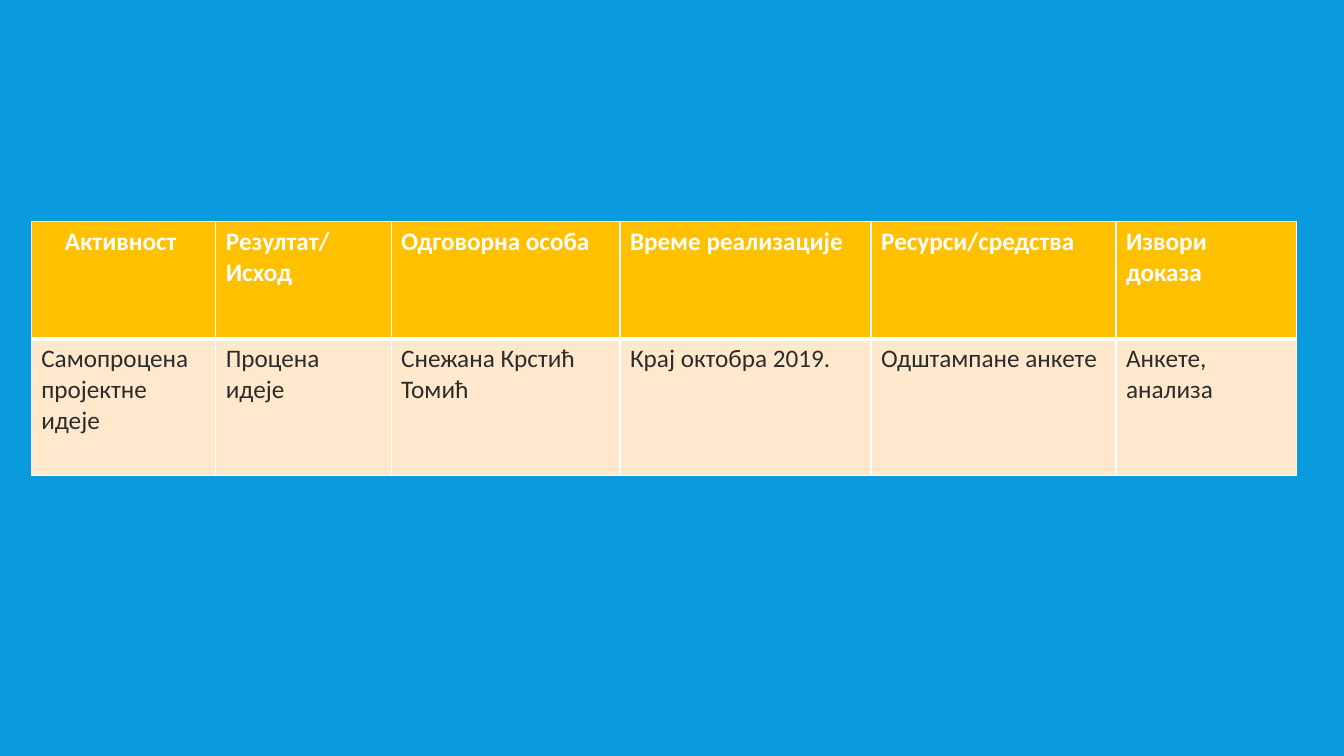
from lxml import etree
from pptx import Presentation
from pptx import util as u
from pptx.dml.color import RGBColor
from pptx.enum import text
from pptx.oxml import ns

THEME = {
    "background": "099BDD",
    "border": "FFFFFF",
    "header": {"fill": "FFC000", "color": "FFFFFF", "font": {"name": "Calibri", "size": u.Pt(18), "bold": True}},
    "body": {"fill": "FFE8CC", "color": "2C2C2C", "font": {"name": "Calibri", "size": u.Pt(18), "bold": False}},
}
BORDERS = {
    "header": {"lnL": 1, "lnR": 1, "lnT": 1, "lnB": 3},
    "body": {"lnL": 1, "lnR": 1, "lnT": 3, "lnB": 1},
}
PLAN = {
    "header": ["Активност ", "Резултат/\nИсход", "Одговорна особа",
               "Време реализације", "Ресурси/средства", "Извори доказа"],
    "body": ["Самопроцена пројектне идеје", "Процена идеје", "Снежана Крстић Томић",
             "Крај октобра 2019.", "Одштампане анкете", "Анкете, анализа"],
}
COLUMN_WIDTHS = [1.83, 1.74, 2.27, 2.49, 2.43, 1.79]
ROW_HEIGHTS = [1.16, 1.36]


def add_border(cell, side, points):
    line = etree.SubElement(cell._tc.get_or_add_tcPr(), ns.qn("a:" + side), w=str(u.Pt(points)))
    fill = etree.SubElement(line, ns.qn("a:solidFill"))
    etree.SubElement(fill, ns.qn("a:srgbClr"), val=THEME["border"])


deck = Presentation()
deck.slide_width, deck.slide_height = u.Inches(13.33), u.Inches(7.5)
slide = deck.slides.add_slide(deck.slide_layouts[6])
slide.background.fill.solid()
slide.background.fill.fore_color.rgb = RGBColor.from_string(THEME["background"])

plan = slide.shapes.add_table(
    len(PLAN), len(COLUMN_WIDTHS), u.Inches(0.31), u.Inches(2.2),
    u.Inches(sum(COLUMN_WIDTHS)), u.Inches(sum(ROW_HEIGHTS))).table
plan.horz_banding = False
for column, width in zip(plan.columns, COLUMN_WIDTHS):
    column.width = u.Inches(width)

for row, height, (part, entries) in zip(plan.rows, ROW_HEIGHTS, PLAN.items()):
    row.height = u.Inches(height)
    look = THEME[part]
    for cell, entry in zip(row.cells, entries):
        for side, points in BORDERS[part].items():
            add_border(cell, side, points)
        cell.fill.solid()
        cell.fill.fore_color.rgb = RGBColor.from_string(look["fill"])
        cell.text = entry
        for paragraph in cell.text_frame.paragraphs:
            for run in paragraph.runs:
                for attribute, setting in look["font"].items():
                    setattr(run.font, attribute, setting)
                run.font.color.rgb = RGBColor.from_string(look["color"])

plan.cell(0, 0).text_frame.paragraphs[0].alignment = text.PP_ALIGN.CENTER

deck.save("out.pptx")
